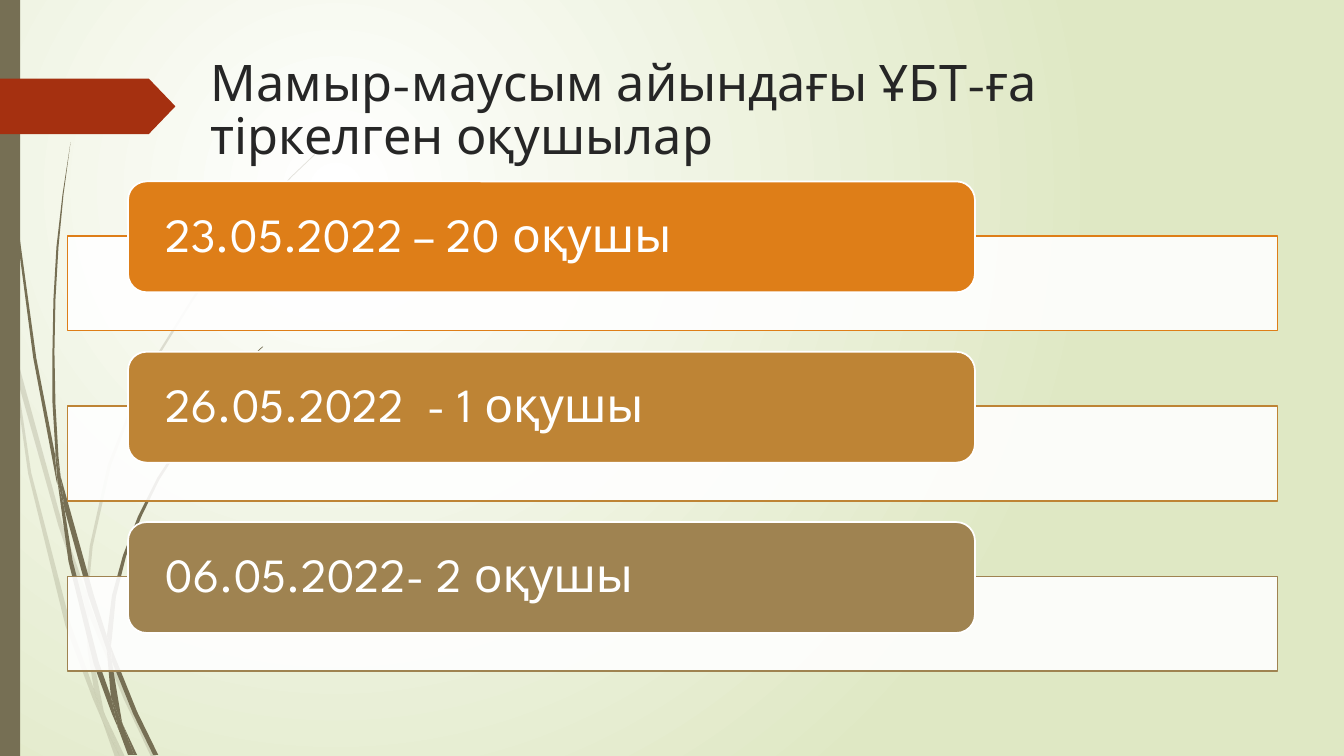
"""Build the slide listing the pupils registered for the exam by date."""
from lxml import etree
from pptx import Presentation
from pptx.dml.color import RGBColor
from pptx.enum.shapes import MSO_SHAPE
from pptx.enum.text import MSO_ANCHOR, MSO_AUTO_SIZE, PP_ALIGN
from pptx.oxml.ns import qn
from pptx.util import Inches, Pt

RECT, ROUNDED, ARROW = MSO_SHAPE.RECTANGLE, MSO_SHAPE.ROUNDED_RECTANGLE, MSO_SHAPE.PENTAGON
MIDDLE, LEFT, NO_FIT = MSO_ANCHOR.MIDDLE, PP_ALIGN.LEFT, MSO_AUTO_SIZE.NONE

TITLE = "Мамыр-маусым айындағы ҰБТ-ға тіркелген оқушылар"
REGISTRATIONS = [
    ("23.05.2022 – 20 оқушы", "DE7E18"),
    ("26.05.2022  - 1 оқушы", "BE8435"),
    ("06.05.2022- 2 оқушы", "9F8351"),
]
COLORS = {"white": "FFFFFF", "meadow": "DFE8C4", "stem": "766F54",
          "arrow": "A53010", "title": "262626"}
FONT = "League Spartan"
SLIDE_W, SLIDE_H = 13.33, 7.5
FIRST_PANEL_TOP, ROW_PITCH, TAB_RISE = 2.34, 1.69, 0.54
HUNDREDTH = Inches(0.01)

PALE_WISPS = [
    [(11, 350), (9, 322), (0, 282), (0, 299), (10, 344)],
    [(58, 522), (84, 599), (85, 586), (62, 520), (14, 345), (17, 376)],
    [(92, 607), (88, 596), (88, 610), (123, 694), (150, 751), (155, 751), (127, 692)],
    [(119, 751), (124, 751), (105, 711)],
    [(93, 683), (70, 619), (31, 469), (17, 376), (11, 350), (28, 470), (65, 621),
     (92, 693), (101, 714), (99, 707)],
    [(84, 599), (87, 646), (93, 683), (96, 692), (105, 711), (103, 706), (91, 646),
     (88, 610), (88, 608)],
    [(88, 584), (92, 542), (110, 462), (132, 404), (160, 349), (193, 296), (229, 245),
     (268, 198), (290, 175), (312, 154), (312, 153), (289, 175), (268, 197), (228, 244),
     (191, 295), (158, 348), (130, 403), (107, 461), (89, 542), (85, 584), (85, 586),
     (88, 596)],
    [(101, 714), (114, 751), (119, 751)],
    [(88, 608), (88, 596), (85, 586), (84, 599)],
    [(96, 692), (93, 683), (99, 707), (101, 714), (119, 751), (105, 711)],
]
DARK_WISPS = [
    [(7, 110), (17, 233), (33, 355), (56, 477), (57, 481), (55, 457), (55, 453),
     (36, 355), (19, 232), (8, 109), (5, 48), (4, 0), (3, 0), (4, 48)],
    [(88, 592), (106, 645), (106, 631), (93, 590), (60, 472), (64, 505)],
    [(113, 649), (110, 641), (111, 656), (132, 708), (152, 749), (157, 749), (136, 706)],
    [(110, 691), (98, 657), (72, 556), (64, 505), (57, 477), (68, 557), (93, 659),
     (111, 708), (117, 722), (116, 717)],
    [(60, 472), (58, 453), (55, 401), (54, 349), (55, 297), (58, 245), (63, 193),
     (70, 141), (62, 193), (56, 245), (53, 297), (52, 349), (52, 399), (55, 449)],
    [(133, 749), (136, 749), (122, 719)],
    [(57, 477), (64, 505), (60, 472), (55, 449), (55, 453)],
    [(111, 633), (115, 592), (125, 552), (140, 513), (158, 476), (181, 440), (205, 406),
     (231, 374), (245, 359), (261, 344), (260, 344), (245, 358), (231, 373), (204, 405),
     (179, 439), (156, 474), (137, 512), (122, 551), (111, 591), (106, 631), (110, 641)],
    [(117, 722), (127, 749), (131, 749)],
    [(106, 645), (110, 691), (116, 706), (122, 719), (121, 716), (111, 656), (109, 651)],
    [(106, 645), (109, 651), (111, 656), (110, 641), (106, 631)],
    [(116, 706), (110, 691), (116, 717), (117, 722), (130, 749), (133, 749), (122, 719)],
]


def paint(shape, fill, opacity=100, outline=None):
    shape.shadow.inherit = False
    shape.fill.solid()
    shape.fill.fore_color.rgb = RGBColor.from_string(fill)
    if opacity < 100:
        color = shape.fill._xPr.find(qn("a:solidFill"))[0]
        etree.SubElement(color, qn("a:alpha"), val=str(opacity * 1000))
    if outline:
        shape.line.color.rgb = RGBColor.from_string(outline)
        shape.line.width = Pt(1.25)
    else:
        shape.line.fill.background()


def add_block(slide, kind, box, fill, **style):
    block = slide.shapes.add_shape(kind, *map(Inches, box))
    paint(block, fill, **style)
    return block


def write(frame, text, size, color, spacing):
    frame.text = text
    frame.word_wrap = True
    frame.auto_size = NO_FIT
    frame.vertical_anchor = MIDDLE
    line = frame.paragraphs[0]
    line.alignment = LEFT
    line.line_spacing = spacing
    line.font.name = FONT
    line.font.size = Pt(size)
    line.font.color.rgb = RGBColor.from_string(color)


def set_background(slide):
    fill = slide.background.fill
    fill.gradient()
    for stop, name in zip(fill.gradient_stops, ("white", "meadow")):
        stop.color.rgb = RGBColor.from_string(COLORS[name])
    gradient = slide._element.find(".//" + qn("a:gradFill"))
    gradient.remove(gradient.find(qn("a:lin")))
    glow = etree.SubElement(gradient, qn("a:path"), {"path": "circle"})
    etree.SubElement(glow, qn("a:fillToRect"), l="50000", t="50000", r="100000", b="100000")


def add_wisps(slide, wisps, opacity):
    for start, *rest in wisps:
        builder = slide.shapes.build_freeform(*start, scale=HUNDREDTH)
        builder.add_line_segments(rest, close=True)
        paint(builder.convert_to_shape(), COLORS["stem"], opacity)


def main():
    deck = Presentation()
    deck.slide_width, deck.slide_height = Inches(SLIDE_W), Inches(SLIDE_H)
    slide = deck.slides.add_slide(deck.slide_layouts[5])
    set_background(slide)
    add_wisps(slide, PALE_WISPS, 20)
    add_wisps(slide, DARK_WISPS, 100)
    add_block(slide, RECT, (0, 0, 0.2, SLIDE_H), COLORS["stem"])
    arrow = add_block(slide, ARROW, (0, 0.78, 1.74, 0.55), COLORS["arrow"])
    arrow.adjustments[0] = 0.48

    title = slide.shapes.title
    title.left, title.top, title.width, title.height = map(Inches, (1.99, 0.41, 9.75, 1.4))
    write(title.text_frame, TITLE, 36, COLORS["title"], 0.88)
    slide.shapes._spTree.append(title._element)

    for row, (registration, accent) in enumerate(REGISTRATIONS):
        top = FIRST_PANEL_TOP + row * ROW_PITCH
        add_block(slide, RECT, (0.67, top, 12, 0.94), COLORS["white"],
                  opacity=90, outline=accent)
        tab = add_block(slide, ROUNDED, (1.27, top - TAB_RISE, 8.4, 1.1), accent,
                        outline=COLORS["white"])
        frame = tab.text_frame
        write(frame, registration, 34, COLORS["white"], 0.9)
        frame.margin_left = frame.margin_right = Inches(0.32)
        frame.margin_top = frame.margin_bottom = 0

    deck.save("out.pptx")


if __name__ == "__main__":
    main()
